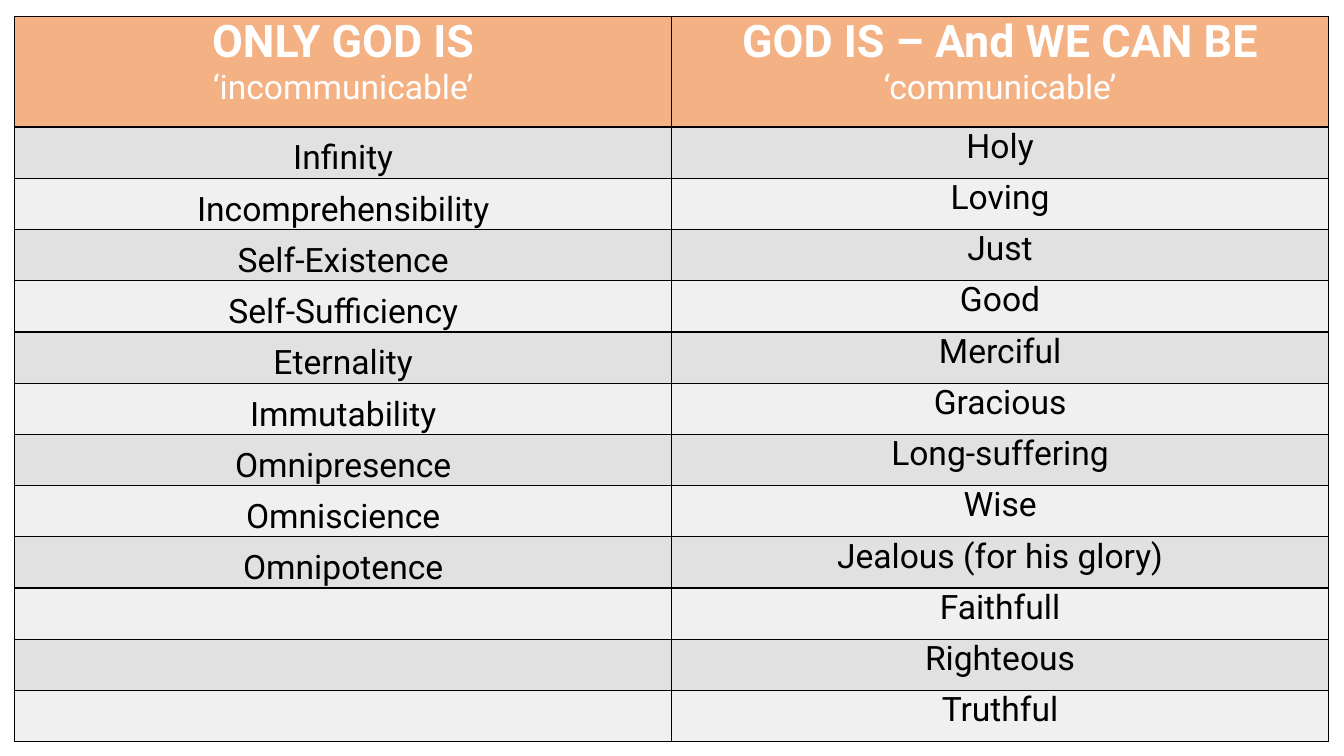
from dataclasses import dataclass
from itertools import zip_longest

from lxml import etree
from pptx import Presentation, table as tb, util as u
from pptx.dml import color
from pptx.enum import text as tx
from pptx.oxml import ns

HUES = {"head": "F4B183", "dark": "E1E1E1", "light": "F0F0F0",
        "white": "FFFFFF", "black": "000000"}
FONT = "Roboto"
WIDE, HIGH = u.Inches(13.33), u.Inches(7.5)

# Table frame as shares of the slide
LEFT, TOP = 0.011, 0.0213
SPAN, DEEP = 0.9775, 0.96
HEAD = 0.1467


@dataclass
class Column:
    title: str
    note: str
    anchor: tx.MSO_ANCHOR
    traits: list[str]


COLUMNS = [
    Column("ONLY GOD IS", "‘incommunicable’", tx.MSO_ANCHOR.BOTTOM,
           ["Infinity", "Incomprehensibility", "Self-Existence",
            "Self-Sufficiency", "Eternality", "Immutability",
            "Omnipresence", "Omniscience", "Omnipotence"]),
    Column("GOD IS – And WE CAN BE", "‘communicable’", tx.MSO_ANCHOR.TOP,
           ["Holy", "Loving", "Just", "Good", "Merciful", "Gracious",
            "Long-suffering", "Wise", "Jealous (for his glory)",
            "Faithfull", "Righteous", "Truthful"]),
]


def rgb(hue: str) -> color.RGBColor:
    return color.RGBColor.from_string(HUES[hue])


def write(par, words: str, *, size: int = 24, bold: bool = False,
          hue: str = "black") -> None:
    par.alignment = tx.PP_ALIGN.CENTER
    run = par.add_run()
    run.text = words
    font = run.font
    font.name, font.size, font.bold = FONT, u.Pt(size), bold
    font.color.rgb = rgb(hue)


def style(cell: tb._Cell, hue: str, anchor: tx.MSO_ANCHOR) -> None:
    """Give a cell its margins, borders and fill."""
    cell.margin_left = cell.margin_right = u.Inches(0.07)
    cell.margin_top = cell.margin_bottom = 0
    cell.vertical_anchor = anchor
    props = cell._tc.get_or_add_tcPr()
    for side in ("L", "R", "T", "B"):
        line = etree.SubElement(props, ns.qn(f"a:ln{side}"), w=str(u.Pt(1)))
        solid = etree.SubElement(line, ns.qn("a:solidFill"))
        etree.SubElement(solid, ns.qn("a:srgbClr"), val=HUES["black"])
    cell.fill.solid()
    cell.fill.fore_color.rgb = rgb(hue)


def build(slide) -> None:
    rows = list(zip_longest(*(col.traits for col in COLUMNS), fillvalue=""))
    frame = slide.shapes.add_table(
        len(rows) + 1, len(COLUMNS), int(LEFT * WIDE), int(TOP * HIGH),
        int(SPAN * WIDE), int(DEEP * HIGH))
    grid = frame.table
    grid.rows[0].height = int(HEAD * HIGH)
    for row in list(grid.rows)[1:]:
        row.height = int((DEEP - HEAD) * HIGH / len(rows))

    # Header row
    for x, col in enumerate(COLUMNS):
        cell = grid.cell(0, x)
        style(cell, "head", tx.MSO_ANCHOR.TOP)
        body = cell.text_frame
        write(body.paragraphs[0], col.title, size=32, bold=True, hue="white")
        write(body.add_paragraph(), col.note, hue="white")

    # Striped trait rows
    for y, traits in enumerate(rows, 1):
        for x, trait in enumerate(traits):
            cell = grid.cell(y, x)
            style(cell, "dark" if y % 2 else "light", COLUMNS[x].anchor)
            if trait:
                write(cell.text_frame.paragraphs[0], trait)


def main() -> None:
    deck = Presentation()
    deck.slide_width, deck.slide_height = WIDE, HIGH
    build(deck.slides.add_slide(deck.slide_layouts[6]))
    deck.save("out.pptx")


if __name__ == "__main__":
    main()
